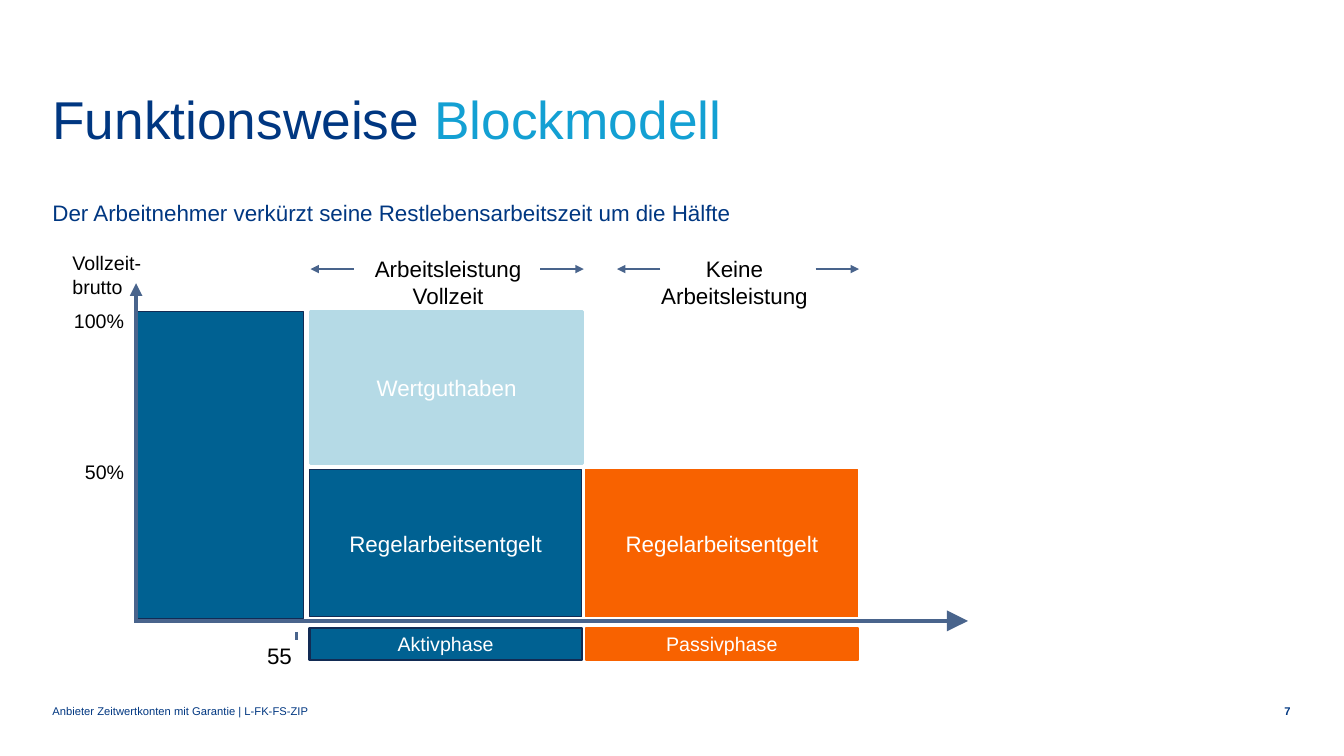
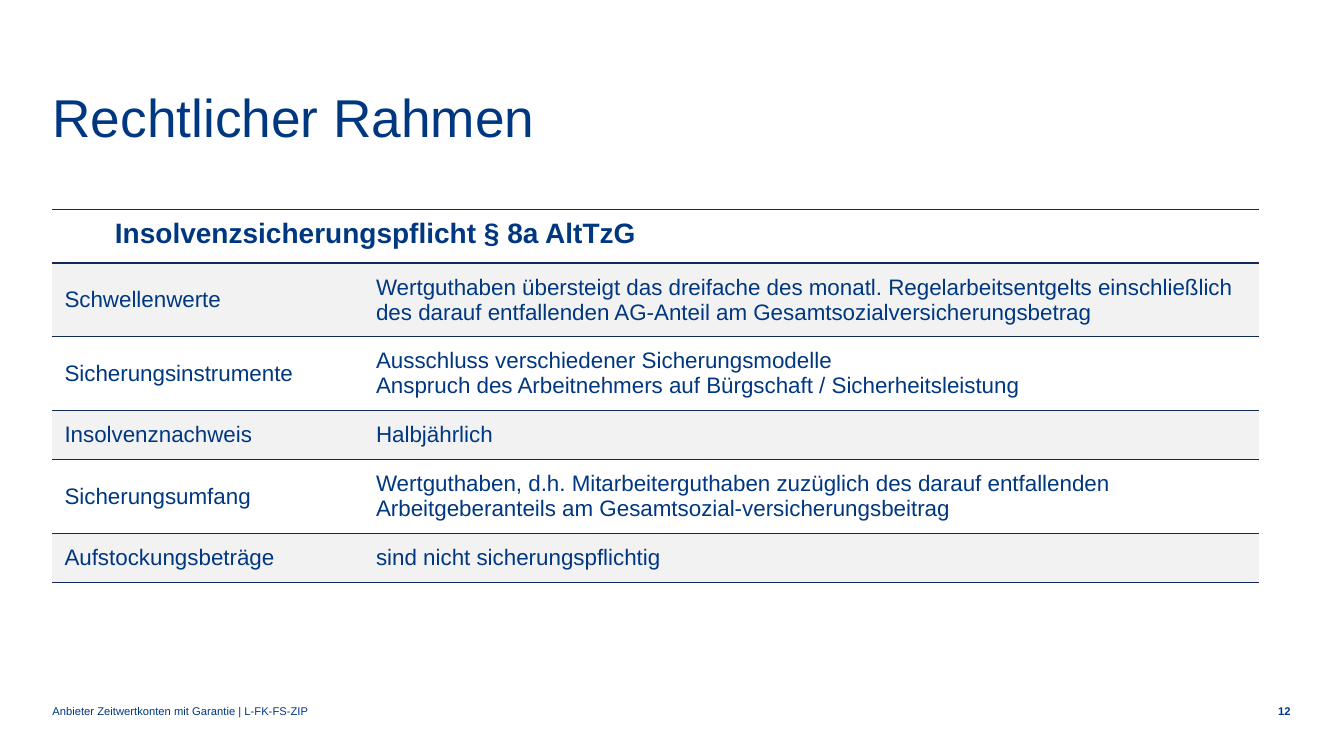
from dataclasses import dataclass
from typing import NamedTuple

from lxml.etree import SubElement
from pptx import Presentation
from pptx.dml.color import RGBColor
from pptx.enum.shapes import MSO_CONNECTOR, MSO_SHAPE
from pptx.enum.text import MSO_ANCHOR, MSO_AUTO_SIZE, PP_ALIGN
from pptx.oxml.ns import qn
from pptx.presentation import Presentation as PresentationType
from pptx.slide import Slide
from pptx.table import _Cell
from pptx.text.text import TextFrame, _Paragraph
from pptx.util import Emu, Pt

EMU_PER_PX = 9144
FONT = "Arial"
COLORS = {
    "navy": "003781", "sky": "13A0D3", "blue": "006192", "outline": "122B54",
    "pale": "B5DAE6", "orange": "F86200", "axis": "49648C",
    "band": "F2F2F2", "black": "000000", "white": "FFFFFF",
}
FOOTER = "Anbieter Zeitwertkonten mit Garantie | L-FK-FS-ZIP"
PLAIN_TABLE_STYLE = "{2D5ABB26-0587-4C30-8999-92F81FD0307C}"
MARGIN = 52


class Box(NamedTuple):
    left: int
    top: int
    width: int
    height: int


class TextRun(NamedTuple):
    text: str
    size: int
    color: str
    bold: bool = False


@dataclass(frozen=True)
class Block:
    box: Box
    fill: str
    line: str
    line_width: float
    text: str = ""
    size: int = 16


@dataclass(frozen=True)
class Label:
    box: Box
    text: str
    size: int
    align: PP_ALIGN = PP_ALIGN.LEFT


@dataclass(frozen=True)
class Line:
    start: tuple[int, int]
    end: tuple[int, int]
    width: float
    head: str = ""


@dataclass(frozen=True)
class LegalRow:
    topic: str
    details: tuple[str, ...]
    height: int


PHASE_WIDTH = 270
ACTIVE, PASSIVE = 307, 581
PAY_TOP, PAY_HEIGHT = 466, 146
PHASE_TOP, PHASE_HEIGHT = 623, 32
BASELINE = 616
ARROW_TOP, ARROW_LENGTH = 267, 43

BLOCKS = (
    Block(Box(134, 309, 167, 305), "blue", "outline", 0.75),
    Block(Box(ACTIVE, PHASE_TOP, PHASE_WIDTH, PHASE_HEIGHT), "blue", "outline", 1.5, "Aktivphase", 14),
    Block(Box(ACTIVE, PAY_TOP, PHASE_WIDTH, PAY_HEIGHT), "blue", "outline", 0.75, "Regelarbeitsentgelt"),
    Block(Box(ACTIVE + 1, 309, PHASE_WIDTH, 151), "pale", "pale", 2, "Wertguthaben"),
    Block(Box(PASSIVE, PAY_TOP, PHASE_WIDTH, PAY_HEIGHT), "orange", "orange", 0.75, "Regelarbeitsentgelt"),
    Block(Box(PASSIVE, PHASE_TOP, PHASE_WIDTH, PHASE_HEIGHT), "orange", "orange", 1.5, "Passivphase", 14),
)
LABELS = (
    Label(Box(62, 244, 104, 57), "Vollzeit- brutto", 14),
    Label(Box(62, 302, 71, 33), "100%", 14, PP_ALIGN.RIGHT),
    Label(Box(MARGIN, 451, 81, 33), "50%", 14, PP_ALIGN.RIGHT),
    Label(Box(353, 248, 183, 63), "Arbeitsleistung Vollzeit", 16, PP_ALIGN.CENTER),
    Label(Box(637, 248, 183, 63), "Keine Arbeitsleistung", 16, PP_ALIGN.CENTER),
    Label(Box(255, 632, 55, 37), "55", 16),
)
AXES = (
    Line((133, BASELINE), (960, BASELINE), 3, "lg"),
    Line((135, BASELINE), (135, 281), 3, "med"),
    Line((294, 627), (294, 635), 2.25),
)
PHASE_ARROWS = tuple(
    Line((start, ARROW_TOP), (start + direction * ARROW_LENGTH, ARROW_TOP), 1.5, "med")
    for start, direction in ((351, -1), (536, 1), (655, -1), (809, 1))
)

HEADER_HEIGHT = 53
ONE_LINE, TWO_LINES = 49, 73
TABLE_COLUMNS = (321, 876)
LEGAL_ROWS = (
    LegalRow("Schwellenwerte", (
        "Wertguthaben übersteigt das dreifache des monatl. Regelarbeitsentgelts einschließlich "
        "des darauf entfallenden AG-Anteil am Gesamtsozialversicherungsbetrag",), TWO_LINES),
    LegalRow("Sicherungsinstrumente", (
        "Ausschluss verschiedener Sicherungsmodelle",
        "Anspruch des Arbeitnehmers auf Bürgschaft / Sicherheitsleistung"), TWO_LINES),
    LegalRow("Insolvenznachweis", ("Halbjährlich",), ONE_LINE),
    LegalRow("Sicherungsumfang", (
        "Wertguthaben, d.h. Mitarbeiterguthaben zuzüglich des darauf entfallenden "
        "Arbeitgeberanteils am Gesamtsozial-versicherungsbeitrag",), TWO_LINES),
    LegalRow("Aufstockungsbeträge", ("sind nicht sicherungspflichtig",), ONE_LINE),
)


def px(value: int) -> Emu:
    return Emu(value * EMU_PER_PX)


def place(box: Box) -> tuple[Emu, ...]:
    return tuple(px(value) for value in box)


def rgb(name: str) -> RGBColor:
    return RGBColor.from_string(COLORS[name])


def add_runs(paragraph: _Paragraph, *text_runs: TextRun) -> None:
    for text_run in text_runs:
        run = paragraph.add_run()
        run.text = text_run.text
        run.font.name = FONT
        run.font.size = Pt(text_run.size)
        run.font.bold = text_run.bold
        run.font.color.rgb = rgb(text_run.color)


def remove_insets(frame: TextFrame) -> None:
    frame.margin_left = frame.margin_top = frame.margin_right = frame.margin_bottom = 0


def add_text(slide: Slide, box: Box, text_run: TextRun, align: PP_ALIGN = PP_ALIGN.LEFT,
             anchor: MSO_ANCHOR = MSO_ANCHOR.TOP, inset: bool = False) -> _Paragraph:
    frame = slide.shapes.add_textbox(*place(box)).text_frame
    frame.word_wrap = True
    frame.vertical_anchor = anchor
    if not inset:
        remove_insets(frame)
    paragraph = frame.paragraphs[0]
    paragraph.alignment = align
    add_runs(paragraph, text_run)
    return paragraph


def add_block(slide: Slide, block: Block) -> None:
    shape = slide.shapes.add_shape(MSO_SHAPE.RECTANGLE, *place(block.box))
    shape.shadow.inherit = False
    shape.fill.solid()
    shape.fill.fore_color.rgb = rgb(block.fill)
    shape.line.color.rgb = rgb(block.line)
    shape.line.width = Pt(block.line_width)
    if block.text:
        frame = shape.text_frame
        frame.vertical_anchor = MSO_ANCHOR.MIDDLE
        frame.paragraphs[0].alignment = PP_ALIGN.CENTER
        add_runs(frame.paragraphs[0], TextRun(block.text, block.size, "white"))


def add_line(slide: Slide, line: Line) -> None:
    connector = slide.shapes.add_connector(
        MSO_CONNECTOR.STRAIGHT, *(px(value) for value in line.start + line.end))
    connector.line.color.rgb = rgb("axis")
    connector.line.width = Pt(line.width)
    if line.head:
        SubElement(connector.line._get_or_add_ln(), qn("a:tailEnd"),
                   type="triangle", w=line.head, len=line.head)
    SubElement(connector._element.spPr, qn("a:effectLst"))


def add_titled_slide(presentation: PresentationType, title_top: int, page: int,
                     *title_runs: TextRun) -> Slide:
    """Add a slide with its title, footer and page number."""
    slide = presentation.slides.add_slide(presentation.slide_layouts[5])
    title = slide.shapes.title
    title.left, title.top, title.width, title.height = place(Box(MARGIN, title_top, 1020, 102))
    frame = title.text_frame
    frame.auto_size = MSO_AUTO_SIZE.NONE
    frame.word_wrap = True
    frame.vertical_anchor = MSO_ANCHOR.TOP
    remove_insets(frame)
    paragraph = frame.paragraphs[0]
    paragraph.alignment = PP_ALIGN.LEFT
    paragraph.line_spacing = Pt(38)
    add_runs(paragraph, *title_runs)

    footer = add_text(slide, Box(MARGIN, 674, 1020, 38), TextRun(FOOTER, 8, "navy"),
                      anchor=MSO_ANCHOR.BOTTOM)
    footer.line_spacing = 0.9
    number = add_text(slide, Box(1251, 697, 29, 16), TextRun(str(page), 8, "navy", True),
                      PP_ALIGN.RIGHT, MSO_ANCHOR.MIDDLE)
    number.line_spacing = Pt(10)
    return slide


def add_horizontal_borders(cell: _Cell, width: float) -> None:
    properties = cell._tc.get_or_add_tcPr()
    for side in ("a:lnT", "a:lnB"):
        border = SubElement(properties, qn(side), w=str(Pt(width)))
        fill = SubElement(border, qn("a:solidFill"))
        SubElement(fill, qn("a:srgbClr"), val=COLORS["outline"])


def fill_cell(cell: _Cell, lines: tuple[str, ...], indent: int = 0, padding: int = 11,
              size: int = 16, bold: bool = False, banded: bool = False,
              border: float = 0.5) -> None:
    add_horizontal_borders(cell, border)
    if banded:
        cell.fill.solid()
        cell.fill.fore_color.rgb = rgb("band")
    else:
        cell.fill.background()
    cell.vertical_anchor = MSO_ANCHOR.MIDDLE
    cell.margin_left, cell.margin_right = px(indent), 0
    cell.margin_top = cell.margin_bottom = px(padding)
    for index, text in enumerate(lines):
        frame = cell.text_frame
        paragraph = frame.add_paragraph() if index else frame.paragraphs[0]
        paragraph.line_spacing = Pt(18)
        add_runs(paragraph, TextRun(text, size, "navy", bold))


def add_legal_table(slide: Slide) -> None:
    heights = [HEADER_HEIGHT, *(row.height for row in LEGAL_ROWS)]
    box = Box(MARGIN, 208, sum(TABLE_COLUMNS), sum(heights))
    table = slide.shapes.add_table(len(heights), len(TABLE_COLUMNS), *place(box)).table
    table.first_row = table.horz_banding = False
    table._tbl.tblPr.find(qn("a:tableStyleId")).text = PLAIN_TABLE_STYLE
    for column, width in zip(table.columns, TABLE_COLUMNS):
        column.width = px(width)
    for row, height in zip(table.rows, heights):
        row.height = px(height)

    header = table.cell(0, 0)
    header.merge(table.cell(0, 1))
    fill_cell(header, ("Insolvenzsicherungspflicht § 8a AltTzG",), indent=62, padding=0,
              size=20, bold=True, border=1)
    add_horizontal_borders(table.cell(0, 1), 1)
    for index, row in enumerate(LEGAL_ROWS, start=1):
        banded = index % 2 == 1
        fill_cell(table.cell(index, 0), (row.topic,), indent=12, banded=banded)
        fill_cell(table.cell(index, 1), row.details, banded=banded)


def build_block_model(presentation: PresentationType) -> None:
    slide = add_titled_slide(presentation, 96, 7, TextRun("Funktionsweise ", 38, "navy"),
                             TextRun("Blockmodell", 38, "sky"))
    add_text(slide, Box(MARGIN, 198, 1228, 30),
             TextRun("Der Arbeitnehmer verkürzt seine Restlebensarbeitszeit um die Hälfte", 16, "navy"))
    for block in BLOCKS:
        add_block(slide, block)
    for line in AXES + PHASE_ARROWS:
        add_line(slide, line)
    for label in LABELS:
        add_text(slide, label.box, TextRun(label.text, label.size, "black"), label.align, inset=True)


def build_legal_framework(presentation: PresentationType) -> None:
    slide = add_titled_slide(presentation, 94, 12, TextRun("Rechtlicher Rahmen", 38, "navy"))
    add_legal_table(slide)


def main() -> None:
    presentation = Presentation()
    presentation.slide_width, presentation.slide_height = px(1333), px(750)
    build_block_model(presentation)
    build_legal_framework(presentation)
    presentation.save("out.pptx")


if __name__ == "__main__":
    main()
